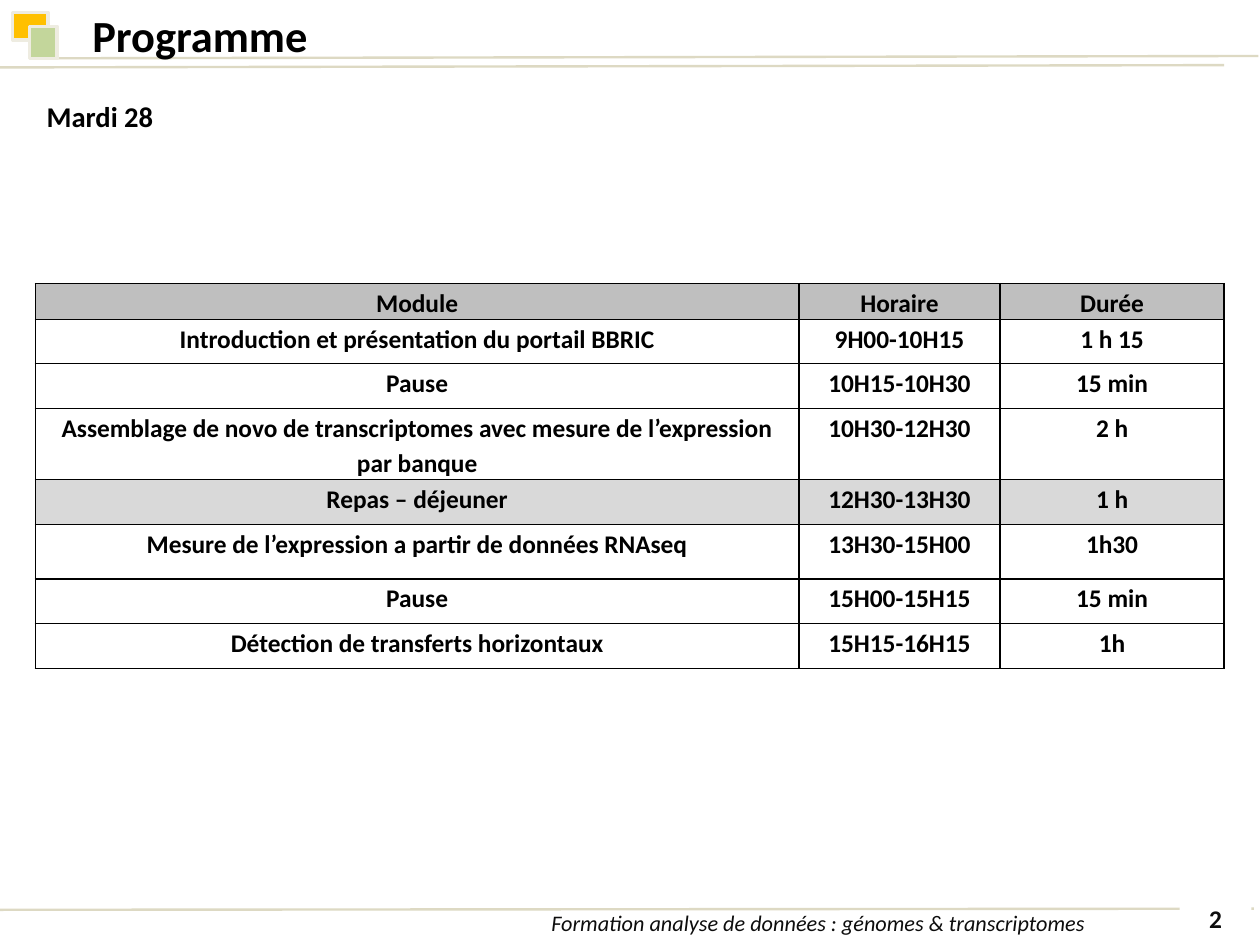
from dataclasses import dataclass

from lxml import etree
from pptx import Presentation
from pptx.dml.color import RGBColor
from pptx.enum.shapes import MSO_CONNECTOR, MSO_SHAPE
from pptx.enum.text import MSO_ANCHOR, MSO_AUTO_SIZE, PP_ALIGN
from pptx.oxml import parse_xml
from pptx.oxml.ns import nsdecls, qn
from pptx.util import Inches, Pt

STRAIGHT = MSO_CONNECTOR.STRAIGHT
RECTANGLE = MSO_SHAPE.RECTANGLE
MIDDLE = MSO_ANCHOR.MIDDLE
FIT_SHAPE = MSO_AUTO_SIZE.SHAPE_TO_FIT_TEXT
LEFT, CENTER = PP_ALIGN.LEFT, PP_ALIGN.CENTER
CM_PER_INCH = 2.54


@dataclass(frozen=True)
class Theme:
    """Colours, font and type sizes of the deck."""
    font: str = "Calibri"
    black: str = "000000"
    ink: str = "0D0D0D"
    white: str = "FFFFFF"
    rule: str = "DDD9C3"
    edge: str = "EEECE1"
    amber: str = "FFC000"
    green: str = "C3D69B"
    header: str = "BFBFBF"
    lunch: str = "D9D9D9"
    title: int = 28
    day: int = 18
    body: int = 16
    footer: int = 14


def write(frame, text, size, color, font, bold=False, italic=False,
          align=LEFT, spacing=None, after=None):
    """Write one formatted paragraph into a text frame."""
    para = frame.paragraphs[0]
    para.alignment = align
    if spacing:
        para.line_spacing = spacing
    if after:
        para.space_after = Pt(after)
    span = para.add_run()
    span.text = text
    span.font.name = font
    span.font.size = Pt(size)
    span.font.bold = bold
    span.font.italic = italic
    span.font.color.rgb = RGBColor.from_string(color)


class SlideBuilder:
    """Draw styled elements on the current slide."""

    def __init__(self, page, theme):
        self.page = page
        self.theme = theme

    def line(self, x1, y1, x2, y2):
        rule = self.page.shapes.add_connector(
            STRAIGHT, Inches(x1), Inches(y1), Inches(x2), Inches(y2))
        rule.line.color.rgb = RGBColor.from_string(self.theme.rule)
        rule.line.width = Pt(1.5)
        etree.SubElement(rule._element.spPr, qn("a:effectLst"))

    def rectangle(self, left, top, width, height, fill, edge=None):
        box = self.page.shapes.add_shape(
            RECTANGLE, Inches(left), Inches(top), Inches(width), Inches(height))
        box.shadow.inherit = False
        box.fill.solid()
        box.fill.fore_color.rgb = RGBColor.from_string(fill)
        if edge:
            box.line.color.rgb = RGBColor.from_string(edge)
            box.line.width = Pt(2)
        else:
            box.line.fill.background()
        return box

    def panel(self, left, top, width, height, text, size, **style):
        box = self.rectangle(left, top, width, height, self.theme.white)
        box.text_frame.word_wrap = True
        box.text_frame.vertical_anchor = MIDDLE
        write(box.text_frame, text, size, self.theme.ink, self.theme.font,
              align=CENTER, spacing=0.9, **style)

    def heading(self, left, top, width, height, text, size):
        box = self.page.shapes.add_textbox(
            Inches(left), Inches(top), Inches(width), Inches(height))
        box.text_frame.word_wrap = False
        box.text_frame.auto_size = FIT_SHAPE
        write(box.text_frame, text, size, self.theme.black, self.theme.font,
              bold=True)

    def cell(self, cell, text, fill):
        cell.margin_left = cell.margin_right = Inches(0.07)
        cell.margin_top = cell.margin_bottom = 0
        properties = cell._tc.get_or_add_tcPr()
        for side in ("lnL", "lnR", "lnT", "lnB"):
            properties.append(parse_xml(
                f'<a:{side} {nsdecls("a")} w="{Pt(1)}"><a:solidFill>'
                f'<a:srgbClr val="{self.theme.black}"/></a:solidFill></a:{side}>'))
        if fill:
            cell.fill.solid()
            cell.fill.fore_color.rgb = RGBColor.from_string(fill)
        else:
            cell.fill.background()
        write(cell.text_frame, text, self.theme.body, self.theme.black,
              self.theme.font, bold=True, align=CENTER, spacing=1.15, after=3)

    def table(self, left, top, widths, rows):
        heights = [height for height, _, _ in rows]
        table = self.page.shapes.add_table(
            len(rows), len(widths), Inches(left), Inches(top),
            Inches(sum(widths)), Inches(sum(heights))).table
        table.first_row = False
        table.horz_banding = False
        for column, width in zip(table.columns, widths):
            column.width = Inches(width)
        for row, (height, fill, texts) in zip(table.rows, rows):
            row.height = Inches(height)
            for cell, text in zip(row.cells, texts):
                self.cell(cell, text, fill)


def main():
    """Build the programme slide."""
    theme = Theme()
    deck = Presentation()
    deck.slide_width = Inches(28 / CM_PER_INCH)
    deck.slide_height = Inches(21 / CM_PER_INCH)
    page = deck.slides.add_slide(deck.slide_layouts[6])
    builder = SlideBuilder(page, theme)

    builder.line(0.5, 0.51, 11.01, 0.49)
    builder.line(-0.01, 0.59, 10.71, 0.57)
    builder.rectangle(0.11, 0.11, 0.31, 0.24, theme.amber, theme.edge)
    builder.rectangle(0.26, 0.23, 0.24, 0.28, theme.green, theme.edge)
    builder.panel(3.46, 7.95, 7.4, 0.27,
                  "Formation analyse de données : génomes & transcriptomes",
                  theme.footer, italic=True)
    builder.line(-0.01, 7.96, 10.97, 7.95)
    builder.panel(10.32, 7.91, 0.63, 0.29, "2", theme.body, bold=True)

    programme = [
        (0.31, theme.header, ("Module", "Horaire", "Durée")),
        (0.39, None, ("Introduction et présentation du portail BBRIC",
                      "9H00-10H15", "1 h 15")),
        (0.39, None, ("Pause", "10H15-10H30", "15 min")),
        (0.62, None, ("Assemblage de novo de transcriptomes avec mesure de "
                      "l’expression par banque", "10H30-12H30", "2 h")),
        (0.39, theme.lunch, ("Repas – déjeuner", "12H30-13H30", "1 h")),
        (0.48, None, ("Mesure de l’expression a partir de données RNAseq",
                      "13H30-15H00", "1h30")),
        (0.39, None, ("Pause", "15H00-15H15", "15 min")),
        (0.39, None, ("Détection de transferts horizontaux",
                      "15H15-16H15", "1h")),
    ]
    builder.table(0.31, 2.48, (6.68, 1.76, 1.96), programme)
    builder.heading(0.71, 0.02, 2.1, 0.57, "Programme", theme.title)
    builder.heading(0.31, 0.82, 1.14, 0.4, "Mardi 28", theme.day)
    deck.save("out.pptx")


if __name__ == "__main__":
    main()
